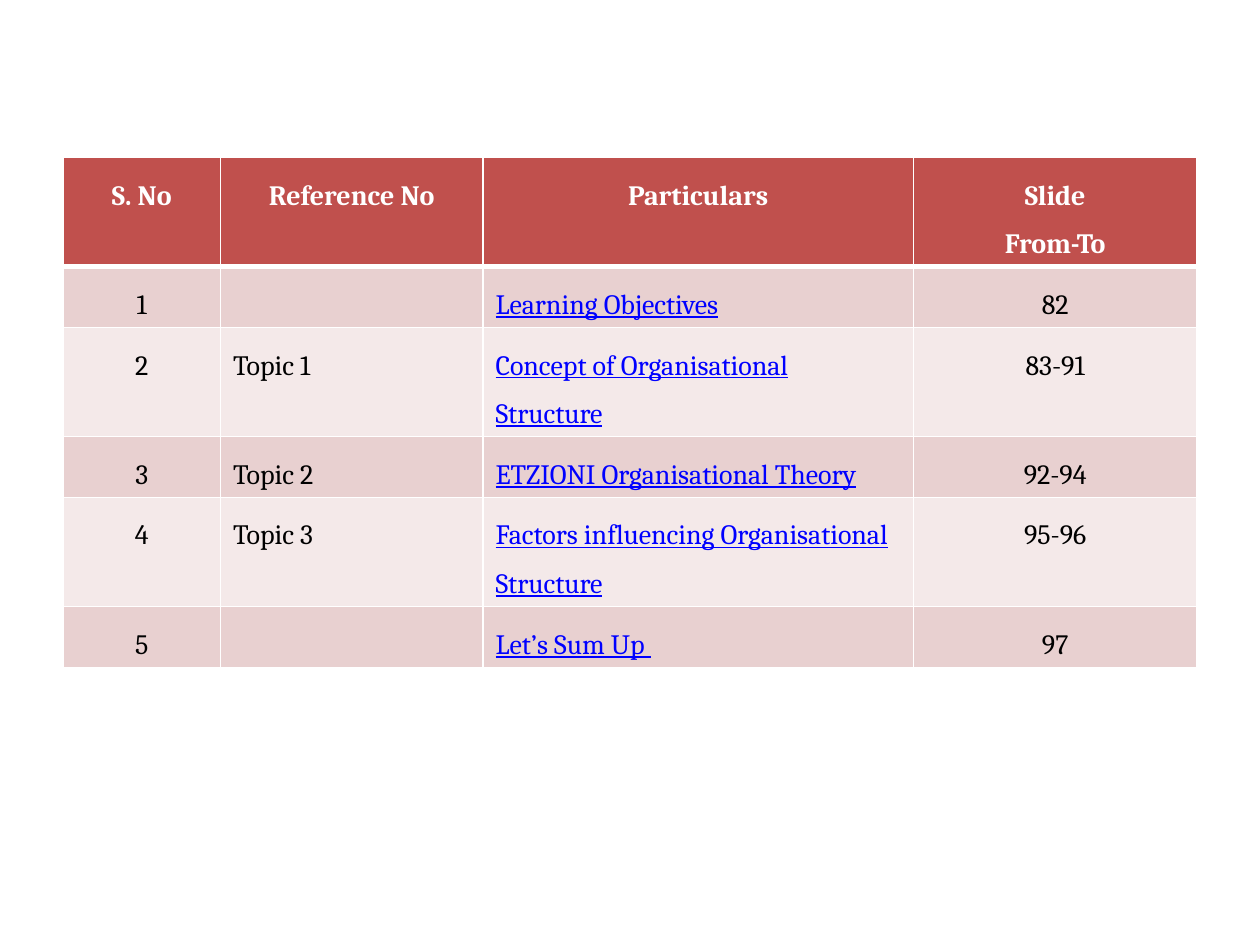
from dataclasses import dataclass

from lxml.etree import SubElement
from pptx import Presentation
from pptx.dml.color import RGBColor
from pptx.enum.text import PP_ALIGN
from pptx.oxml.ns import qn
from pptx.util import Pt

COLORS = {
    "header": "C0504D",
    "odd row": "E8D0D0",
    "even row": "F4E9E9",
    "border": "FFFFFF",
    "header text": "FFFFFF",
    "body text": "000000",
    "entry text": "0000FF",
}
FONT = {"name": "Cambria", "size": Pt(16)}
HEADER_FORMAT = {**FONT, "bold": True}
BODY_FORMAT = {**FONT, "bold": False}
ENTRY_FORMAT = {**BODY_FORMAT, "underline": True}

COLUMN_WIDTHS = [90, 150, 246, 162]
ROW_HEIGHT = 29.2
THIN, THICK = 1, 3


@dataclass
class Entry:
    topic: str
    particulars: str
    slides: str


HEADINGS = ["S. No", "Reference No", "Particulars", "Slide\nFrom-To"]
ENTRIES = [
    Entry("", "Learning Objectives", "82"),
    Entry("Topic 1", "Concept of Organisational Structure", "83-91"),
    Entry("Topic 2", "ETZIONI Organisational Theory", "92-94"),
    Entry("Topic 3", "Factors influencing Organisational Structure", "95-96"),
    Entry("", "Let’s Sum Up ", "97"),
]


def draw_borders(cell, top: float, bottom: float) -> None:
    properties = cell._tc.get_or_add_tcPr()
    widths = {"a:lnL": THIN, "a:lnR": THIN, "a:lnT": top, "a:lnB": bottom}
    for side, width in widths.items():
        line = SubElement(properties, qn(side), w=str(Pt(width)))
        fill = SubElement(line, qn("a:solidFill"))
        SubElement(fill, qn("a:srgbClr"), val=COLORS["border"])


def fill_cell(cell, text: str, fill: str, color: str, font_format: dict,
              align: PP_ALIGN, top: float = THIN, bottom: float = THIN) -> None:
    draw_borders(cell, top, bottom)
    cell.fill.solid()
    cell.fill.fore_color.rgb = RGBColor.from_string(COLORS[fill])
    if not text:
        return
    cell.text_frame.text = text
    for paragraph in cell.text_frame.paragraphs:
        paragraph.alignment = align
        paragraph.line_spacing = 1.5
        for run in paragraph.runs:
            for attribute, value in font_format.items():
                setattr(run.font, attribute, value)
            run.font.color.rgb = RGBColor.from_string(COLORS[color])


def draw_entry(table, number: int, entry: Entry) -> None:
    fill = "odd row" if number % 2 else "even row"
    top = THICK if number == 1 else THIN
    particulars_align = PP_ALIGN.LEFT if entry.topic else PP_ALIGN.JUSTIFY
    columns = [
        (str(number), "body text", BODY_FORMAT, PP_ALIGN.CENTER),
        (entry.topic, "body text", BODY_FORMAT, PP_ALIGN.JUSTIFY),
        (entry.particulars, "entry text", ENTRY_FORMAT, particulars_align),
        (entry.slides, "body text", BODY_FORMAT, PP_ALIGN.CENTER),
    ]
    for column, (text, color, font_format, align) in enumerate(columns):
        fill_cell(table.cell(number, column), text, fill, color, font_format,
                  align, top=top)


def main() -> None:
    presentation = Presentation()
    presentation.slide_width, presentation.slide_height = Pt(720), Pt(540)
    slide = presentation.slides.add_slide(presentation.slide_layouts[6])

    # Table grid
    row_count = len(ENTRIES) + 1
    contents = slide.shapes.add_table(
        row_count, len(HEADINGS), Pt(36), Pt(90),
        Pt(sum(COLUMN_WIDTHS)), Pt(ROW_HEIGHT * row_count)).table
    for column, width in zip(contents.columns, COLUMN_WIDTHS):
        column.width = Pt(width)
    for row in contents.rows:
        row.height = Pt(ROW_HEIGHT)

    # Header row
    for column, heading in enumerate(HEADINGS):
        fill_cell(contents.cell(0, column), heading, "header", "header text",
                  HEADER_FORMAT, PP_ALIGN.CENTER, bottom=THICK)

    # Contents rows
    for number, entry in enumerate(ENTRIES, start=1):
        draw_entry(contents, number, entry)

    presentation.save("out.pptx")


if __name__ == "__main__":
    main()
